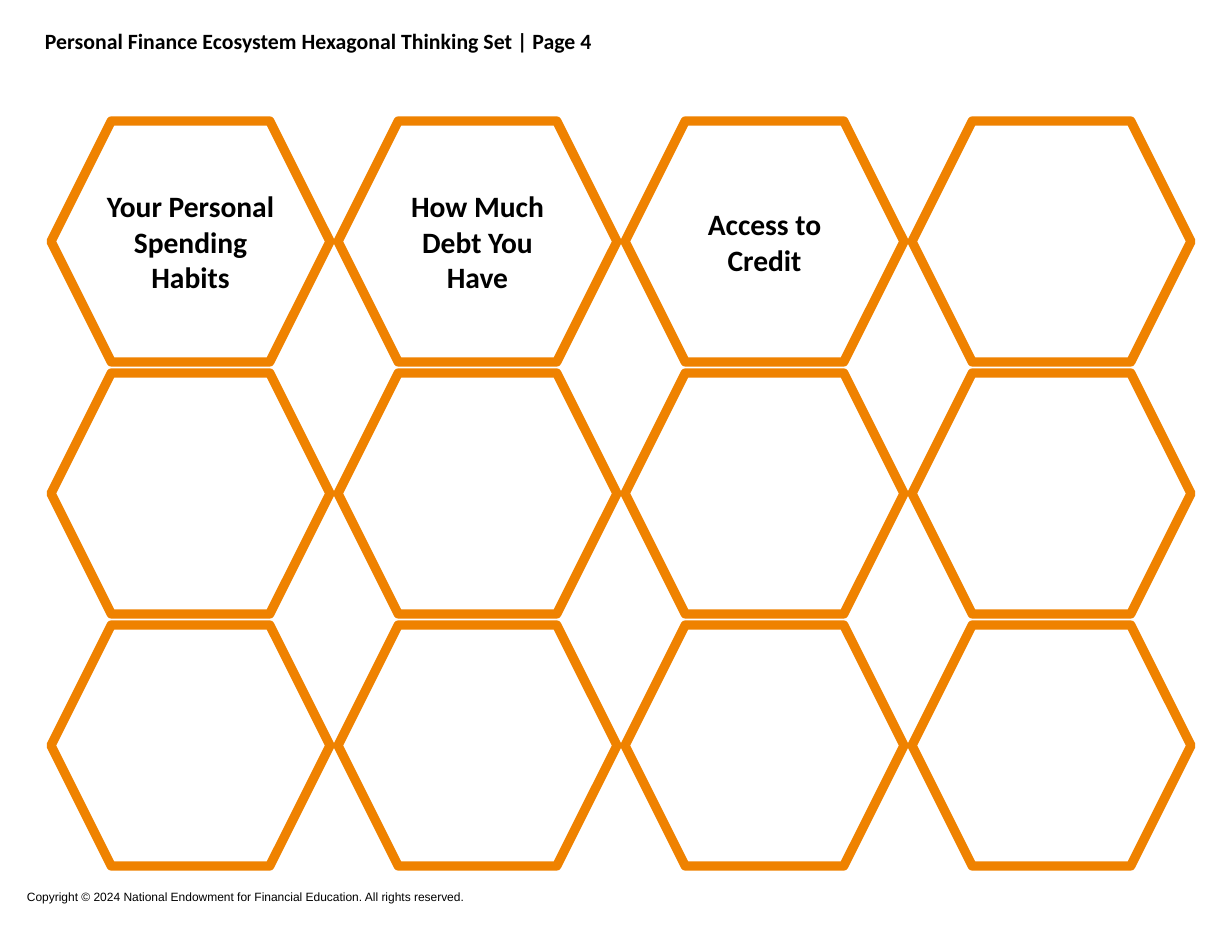
from pptx import Presentation
from pptx.dml.color import RGBColor
from pptx.enum.shapes import MSO_SHAPE as Shape
from pptx.enum.text import MSO_ANCHOR as Anchor, PP_ALIGN as Align
from pptx.util import Pt

TITLE = "Personal Finance Ecosystem Hexagonal Thinking Set | Page 4"
COPYRIGHT = "Copyright © 2024 National Endowment for Financial Education. All rights reserved."
TOPICS = [
    ["Your Personal Spending Habits", "How Much Debt You Have", "Access to Credit", ""],
    ["", "", "", ""],
    ["", "", "", ""],
]

ORANGE = RGBColor(0xEF, 0x82, 0x00)
BLACK = RGBColor(0, 0, 0)

EMU_PER_PX = 914400 // 112
LEFT, TOP = 51, 121
HEX_WIDTH, HEX_HEIGHT = 279, 241
COLUMN_STEP, ROW_STEP = 287, 252
INSET = 11


def px(*lengths):
    return [length * EMU_PER_PX for length in lengths]


def set_text(shape, text, font_name, size, bold, inset, anchor, align, spacing):
    frame = shape.text_frame
    frame.word_wrap = True
    frame.vertical_anchor = anchor
    frame.margin_left = frame.margin_right = inset * EMU_PER_PX
    frame.margin_top = frame.margin_bottom = inset * EMU_PER_PX
    frame.text = text
    paragraph = frame.paragraphs[0]
    paragraph.alignment = align
    paragraph.line_spacing = spacing
    font = paragraph.font
    font.name, font.size, font.bold = font_name, Pt(size), bold
    font.color.rgb = BLACK


def add_hexagon(slide, left, top, topic):
    hexagon = slide.shapes.add_shape(Shape.HEXAGON, *px(left, top, HEX_WIDTH, HEX_HEIGHT))
    hexagon.adjustments[0] = 0.25
    hexagon.shadow.inherit = False
    hexagon.fill.background()
    hexagon.line.color.rgb = ORANGE
    hexagon.line.width = Pt(6)
    if topic:
        set_text(hexagon, topic, "Calibri", 19, True, INSET, Anchor.MIDDLE, Align.CENTER, 1.0)


def main():
    """Build a page of hexagon cards for a personal finance thinking activity."""
    deck = Presentation()
    deck.slide_width, deck.slide_height = px(1232, 952)
    slide = deck.slides.add_slide(deck.slide_layouts[6])

    footer = slide.shapes.add_textbox(*px(16, 874, 531, 37))
    set_text(footer, COPYRIGHT, "Arial", 7.7, False, INSET, Anchor.BOTTOM, Align.LEFT, 0.9)

    for row, topics in enumerate(TOPICS):
        for column, topic in enumerate(topics):
            add_hexagon(slide, LEFT + column * COLUMN_STEP, TOP + row * ROW_STEP, topic)

    heading = slide.shapes.add_textbox(*px(34, 13, 969, 108))
    set_text(heading, TITLE, "Calibri", 14, True, INSET, Anchor.TOP, Align.LEFT, 1.15)

    deck.save("out.pptx")


if __name__ == "__main__":
    main()
